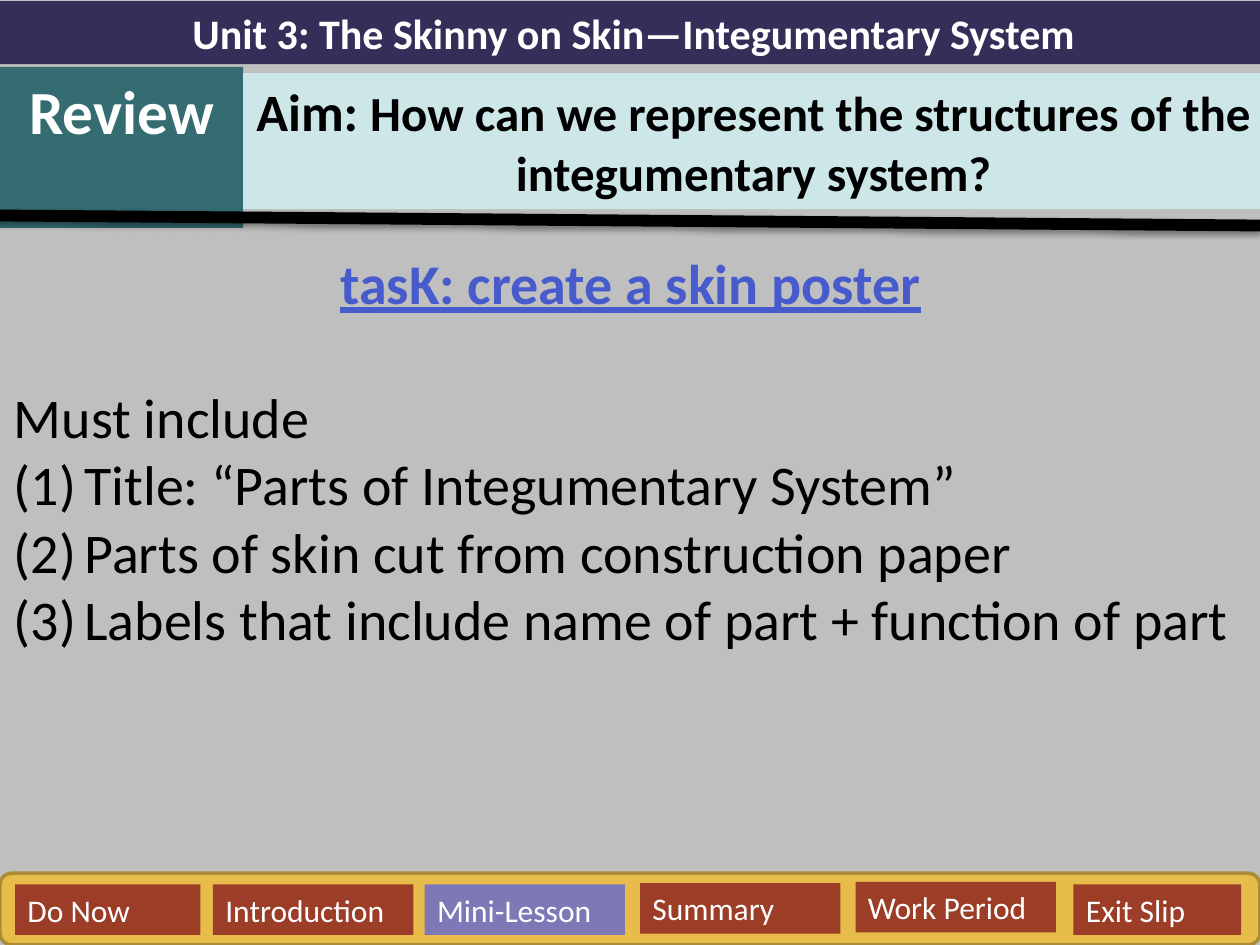
from lxml import etree
from pptx import Presentation, util as u
from pptx.dml.color import RGBColor
from pptx.enum import shapes, text
from pptx.oxml import parse_xml
from pptx.oxml.ns import nsdecls, qn

HUES = {
    "back": "BFBFBF", "navy": "342F59", "teal": "346C71", "pale": "CDE6E8",
    "gold": "E8BC4A", "edge": "AC8B37", "rust": "9C3D28", "lilac": "7E78B7",
    "blue": "475BCD", "white": "FFFFFF", "black": "000000",
}
LEFT, MID = text.PP_ALIGN.LEFT, text.PP_ALIGN.CENTER
RECT, ROUND = shapes.MSO_SHAPE.RECTANGLE, shapes.MSO_SHAPE.ROUNDED_RECTANGLE


class Deck:
    font = "Calibri"

    def __init__(self):
        self.prs = Presentation()
        self.prs.slide_width = u.Inches(10)
        self.prs.slide_height = u.Inches(7.5)
        self.slide = self.prs.slides.add_slide(self.prs.slide_layouts[1])
        self.paint(self.slide.background.fill, "back")

    def paint(self, fill, hue):
        fill.solid()
        fill.fore_color.rgb = RGBColor.from_string(HUES[hue])

    def style(self, run, size, hue, bold=False, line=False):
        font = run.font
        font.name, font.size = self.font, u.Pt(size)
        font.bold, font.underline = bold, line
        font.color.rgb = RGBColor.from_string(HUES[hue])

    def place(self, item, box):
        item.left, item.top, item.width, item.height = map(u.Inches, box)

    def frame(self, item):
        frame = item.text_frame
        frame.word_wrap = True
        frame.auto_size = text.MSO_AUTO_SIZE.NONE
        frame.vertical_anchor = text.MSO_ANCHOR.TOP
        return frame

    def label(self, item, parts, hue, align=MID, bold=True):
        para = self.frame(item).paragraphs[0]
        para.alignment = align
        for words, size in parts:
            run = para.add_run()
            run.text = words
            self.style(run, size, hue, bold)

    def title(self, box, words, size):
        item = self.slide.shapes.title
        self.place(item, box)
        self.paint(item.fill, "navy")
        self.label(item, [(words, size)], "white")

    def block(self, box, hue, kind=RECT, edge=None):
        item = self.slide.shapes.add_shape(kind, *map(u.Inches, box))
        item.shadow.inherit = False
        self.paint(item.fill, hue)
        if edge:
            self.paint(item.line.fill, edge)
            item.line.width = u.Pt(2)
        else:
            item.line.fill.background()
        return item

    def rule(self, start, end, width):
        ends = map(u.Inches, (*start, *end))
        line = self.slide.shapes.add_connector(shapes.MSO_CONNECTOR.STRAIGHT, *ends)
        self.paint(line.line.fill, "black")
        line.line.width = u.Pt(width)
        line._element.spPr.append(parse_xml(
            f'<a:effectLst {nsdecls("a")}><a:outerShdw blurRad="39370" dist="20320" '
            'dir="5400000" rotWithShape="0"><a:srgbClr val="000000">'
            '<a:alpha val="38000"/></a:srgbClr></a:outerShdw></a:effectLst>'))

    def body(self, box, head, lead, items, size):
        item = self.slide.placeholders[1]
        self.place(item, box)
        frame = self.frame(item)
        frame.text = "\n".join([head, lead, *items])
        for i, para in enumerate(frame.paragraphs):
            first, listed = i == 0, i > 1
            para.alignment = MID if first else LEFT
            para.space_before = u.Pt(size * 1.2 if i == 1 else 0)
            self.style(para.runs[0], size, "blue" if first else "black", first, first)
            props = para._p.get_or_add_pPr()
            indent = u.Inches(0.56) if listed else 0
            props.set("marL", str(indent))
            props.set("indent", str(-indent))
            if listed:
                mark = etree.SubElement(props, qn("a:buFont"))
                mark.set("typeface", self.font)
                mark = etree.SubElement(props, qn("a:buAutoNum"))
                mark.set("type", "arabicParenBoth")
            else:
                etree.SubElement(props, qn("a:buNone"))


def main():
    deck = Deck()
    deck.title((0, 0.01, 10.06, 0.5),
               "Unit 3: The Skinny on Skin—Integumentary System", 24)
    deck.body((0.01, 1.92, 9.99, 3.33), "tasK: create a skin poster", "Must include", [
        "Title: “Parts of Integumentary System”",
        "Parts of skin cut from construction paper",
        "Labels that include name of part + function of part",
    ], 32)

    review = deck.block((0, 0.53, 1.93, 1.28), "teal")
    deck.label(review, [("Review", 35)], "white")
    aim = deck.block((1.93, 0.58, 8.1, 1.08), "pale")
    deck.label(aim, [
        ("Aim: ", 30),
        ("How can we represent the structures of the integumentary system?", 28),
    ], "black")
    deck.rule((-0.05, 1.71), (10, 1.79), 6.75)

    deck.block((0, 6.93, 10, 0.57), "gold", ROUND, "edge")
    tabs = [
        ("Do Now", 0.12, 7.02, 1.47), ("Introduction", 1.69, 7.02, 1.59),
        ("Mini-Lesson", 3.37, 7.02, 1.59), ("Summary", 5.08, 7.01, 1.59),
        ("Work Period", 6.79, 7, 1.59), ("Exit Slip", 8.52, 7.02, 1.33),
    ]
    for name, left, top, width in tabs:
        hue = "lilac" if name == "Mini-Lesson" else "rust"
        tab = deck.block((left, top, width, 0.4), hue)
        deck.label(tab, [(name, 18)], "white", LEFT, False)

    deck.prs.save("out.pptx")


if __name__ == "__main__":
    main()
